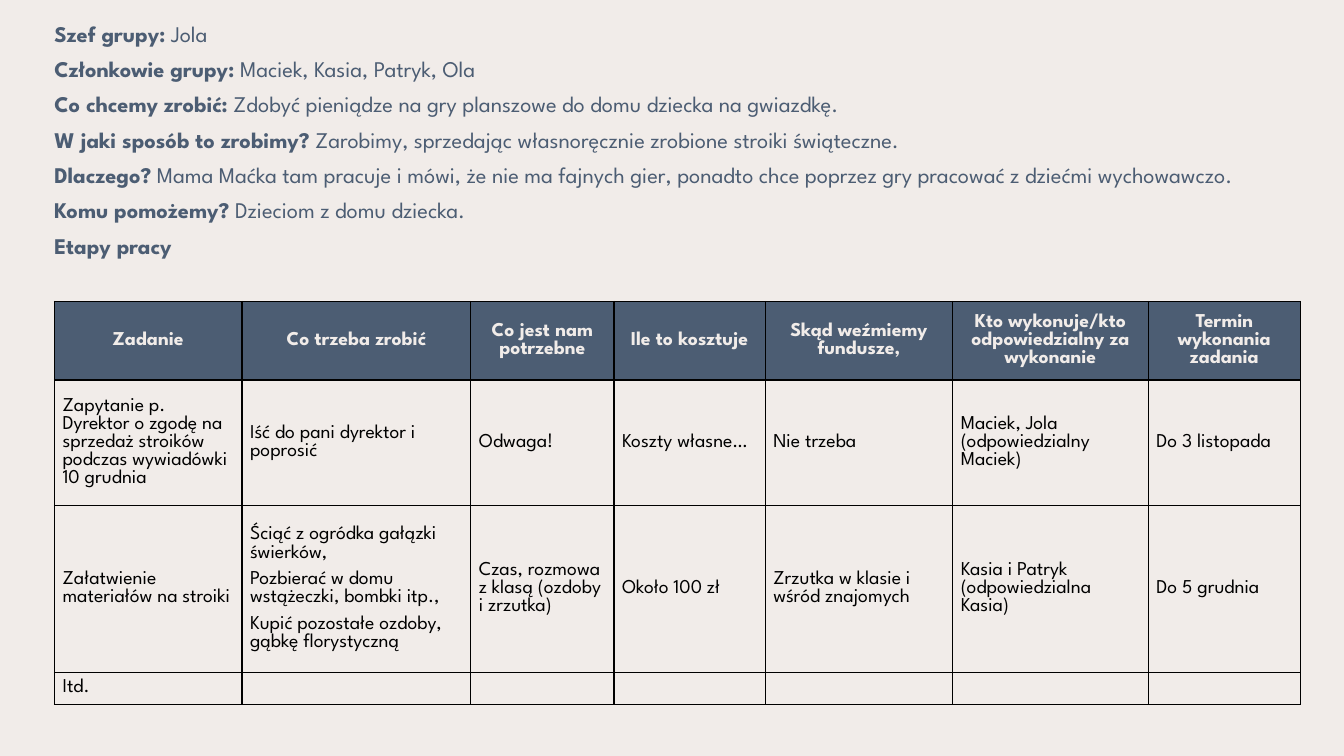
from lxml.etree import SubElement
from pptx import Presentation
from pptx.dml.color import RGBColor
from pptx.enum.text import MSO_ANCHOR, PP_ALIGN
from pptx.oxml.ns import qn
from pptx.util import Inches, Pt

FONT = "League Spartan"
COLORS = {"paper": "F1ECE9", "slate": "4C5D73", "ink": "000000"}

PROJECT = [
    ("Szef grupy:", "Jola"),
    ("Członkowie grupy:", "Maciek, Kasia, Patryk, Ola"),
    ("Co chcemy zrobić:", "Zdobyć pieniądze na gry planszowe do domu dziecka na gwiazdkę."),
    ("W jaki sposób to zrobimy?",
     "Zarobimy, sprzedając własnoręcznie zrobione stroiki świąteczne."),
    ("Dlaczego?",
     "Mama Maćka tam pracuje i mówi, że nie ma fajnych gier, "
     "ponadto chce poprzez gry pracować z dziećmi wychowawczo."),
    ("Komu pomożemy?", "Dzieciom z domu dziecka."),
    ("Etapy pracy", ""),
]

STAGES = [
    ["Zadanie", "Co trzeba zrobić", "Co jest nam potrzebne", "Ile to kosztuje",
     "Skąd weźmiemy fundusze,", "Kto wykonuje/kto odpowiedzialny za wykonanie",
     "Termin wykonania zadania"],
    ["Zapytanie p. Dyrektor o zgodę na sprzedaż stroików podczas wywiadówki 10 grudnia",
     "Iść do pani dyrektor i poprosić", "Odwaga!", "Koszty własne…", "Nie trzeba",
     "Maciek, Jola (odpowiedzialny Maciek)", "Do 3 listopada"],
    ["Załatwienie materiałów na stroiki",
     "Ściąć z ogródka gałązki świerków,\n"
     "Pozbierać w domu wstążeczki, bombki itp.,\n"
     "Kupić pozostałe ozdoby, gąbkę florystyczną",
     "Czas, rozmowa z klasą (ozdoby i zrzutka)", "Około 100 zł",
     "Zrzutka w klasie i wśród znajomych", "Kasia i Patryk (odpowiedzialna Kasia)",
     "Do 5 grudnia"],
    ["Itd.", "", "", "", "", "", ""],
]
COLUMN_WIDTHS = [1.86, 2.27, 1.42, 1.5, 1.86, 1.94, 1.51]
ROW_HEIGHTS = [0.78, 1.24, 1.65, 0.32]


def rgb(name):
    return RGBColor.from_string(COLORS[name])


def style_font(font, size, color, bold=None):
    font.name = FONT
    font.size = Pt(size)
    font.bold = bold
    font.color.rgb = rgb(color)


def add_borders(cell):
    properties = cell._tc.get_or_add_tcPr()
    for side in ("lnL", "lnR", "lnT", "lnB"):
        line = SubElement(properties, qn(f"a:{side}"), w=str(Pt(1)))
        fill = SubElement(line, qn("a:solidFill"))
        SubElement(fill, qn("a:srgbClr"), val=COLORS["ink"])


def add_project(slide):
    box = slide.shapes.add_textbox(Inches(0.44), Inches(0.15), Inches(12.46), Inches(2.76))
    frame = box.text_frame
    frame.word_wrap = True
    for index, (label, answer) in enumerate(PROJECT):
        paragraph = frame.paragraphs[0] if index == 0 else frame.add_paragraph()
        paragraph.alignment = PP_ALIGN.JUSTIFY
        paragraph.space_after = Pt(6)
        parts = [(label, True)] + ([(f" {answer}", False)] if answer else [])
        for text, bold in parts:
            run = paragraph.add_run()
            run.text = text
            style_font(run.font, 16, "slate", bold)


def fill_cell(cell, text, is_header):
    cell.margin_left = cell.margin_right = Inches(0.08)
    cell.margin_top = cell.margin_bottom = Inches(0.04)
    cell.vertical_anchor = MSO_ANCHOR.MIDDLE
    add_borders(cell)
    if is_header:
        cell.fill.solid()
        cell.fill.fore_color.rgb = rgb("slate")
    else:
        cell.fill.background()
    cell.text = text
    for paragraph in cell.text_frame.paragraphs:
        paragraph.alignment = PP_ALIGN.CENTER if is_header else PP_ALIGN.LEFT
        paragraph.space_after = Pt(6)
        style_font(paragraph.font, 14, "paper" if is_header else "ink", is_header)
        if not text:
            # An empty cell takes its line height from the end-of-paragraph mark.
            end = SubElement(paragraph._p, qn("a:endParaRPr"), sz="1400")
            SubElement(end, qn("a:latin"), typeface=FONT)


def add_stages(slide):
    table = slide.shapes.add_table(
        len(STAGES), len(COLUMN_WIDTHS), Inches(0.54), Inches(2.99),
        Inches(sum(COLUMN_WIDTHS)), Inches(sum(ROW_HEIGHTS))).table
    table.horz_banding = False
    for column, width in zip(table.columns, COLUMN_WIDTHS):
        column.width = Inches(width)
    for row, height in zip(table.rows, ROW_HEIGHTS):
        row.height = Inches(height)
    for row_index, stage in enumerate(STAGES):
        for column_index, text in enumerate(stage):
            fill_cell(table.cell(row_index, column_index), text, row_index == 0)


def main():
    presentation = Presentation()
    presentation.slide_width = Inches(13.33)
    presentation.slide_height = Inches(7.5)
    slide = presentation.slides.add_slide(presentation.slide_layouts[6])
    slide.background.fill.solid()
    slide.background.fill.fore_color.rgb = rgb("paper")
    add_project(slide)
    add_stages(slide)
    presentation.save("out.pptx")


if __name__ == "__main__":
    main()
